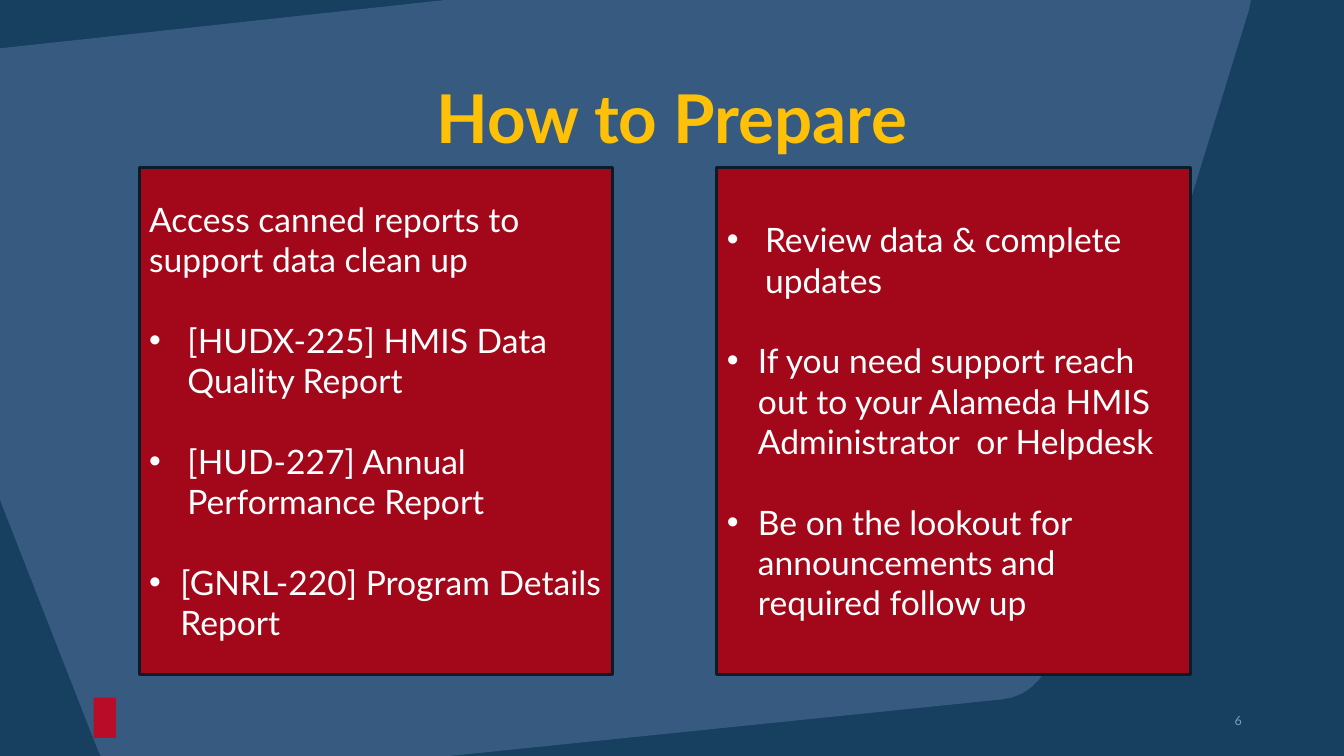
from dataclasses import dataclass

from lxml import etree
from pptx import Presentation, util as u
from pptx.dml.color import RGBColor
from pptx.enum import shapes, text
from pptx.oxml import ns

# Grid: one cell is a tenth of an inch, so the slide is 133.33 x 75 cells
CELL = u.Inches(0.1)
COLUMNS, ROWS = 133.33, 75

NAVY = RGBColor(0x17, 0x40, 0x60)
STEEL = RGBColor(0x37, 0x5B, 0x80)
CRIMSON = RGBColor(0xA3, 0x07, 0x1A)
SCARLET = RGBColor(0xB8, 0x0C, 0x29)
INK = RGBColor(0x0A, 0x1C, 0x2A)
AMBER = RGBColor(0xFF, 0xC1, 0x07)
MIST = RGBColor(0x7D, 0x9C, 0xB7)
WHITE = RGBColor(0xFF, 0xFF, 0xFF)

FONT = "Lato"
BODY_SIZE = 24
ITEM_GAP = 28.8  # one line of body text


@dataclass(frozen=True)
class Area:
    column: float
    row: float
    columns: float
    rows: float


@dataclass(frozen=True)
class Item:
    wording: str
    indent: float = 0  # in cells; zero means no bullet


@dataclass(frozen=True)
class Panel:
    area: Area
    items: tuple[Item, ...]


BACKDROP = [
    (44.2, 0), (124.1, 0), (123.9, 1), (104.1, 65.4), (103.7, 66.5),
    (103.1, 67.4), (102.3, 68.2), (101.4, 68.8), (100.4, 69.2),
    (99.3, 69.4), (44.6, 75), (10, 75), (9.7, 74.4), (0, 49.6), (0, 4.8),
]

PANELS = [
    Panel(Area(13.8, 16.6, 47, 50.3), (
        Item("Access canned reports to support data clean up"),
        Item("[HUDX-225] HMIS Data Quality Report", 3.8),
        Item("[HUD-227] Annual Performance Report", 3.8),
        Item("[GNRL-220] Program Details Report", 3.1),
    )),
    Panel(Area(71.1, 16.6, 47, 50.3), (
        Item("Review data & complete updates", 3.8),
        Item("If you need support reach out to your Alameda "
             "HMIS Administrator  or Helpdesk", 3.1),
        Item("Be on the lookout for announcements and required follow up", 3.1),
    )),
]


def cells(count: float) -> int:
    return round(count * CELL)


def bounds(area: Area) -> tuple[int, int, int, int]:
    return (cells(area.column), cells(area.row),
            cells(area.columns), cells(area.rows))


def place(shape, area: Area) -> None:
    shape.left, shape.top, shape.width, shape.height = bounds(area)


def style_runs(paragraph, size: float, colour: RGBColor, bold: bool = False) -> None:
    for run in paragraph.runs:
        run.font.name = FONT
        run.font.size = u.Pt(size)
        run.font.bold = bold
        run.font.color.rgb = colour


def set_bullet(paragraph, indent: float) -> None:
    properties = paragraph._p.get_or_add_pPr()
    properties.set("marL", str(cells(indent)))
    properties.set("indent", str(-cells(indent)))
    if not indent:
        etree.SubElement(properties, ns.qn("a:buNone"))
        return
    bullet_colour = etree.SubElement(properties, ns.qn("a:buClr"))
    etree.SubElement(bullet_colour, ns.qn("a:srgbClr"), val=str(WHITE))
    etree.SubElement(properties, ns.qn("a:buFont"), typeface="Arial")
    etree.SubElement(properties, ns.qn("a:buChar"), char="•")


def draw_backdrop(slide) -> None:
    corners = [(cells(x), cells(y)) for x, y in BACKDROP]
    builder = slide.shapes.build_freeform(*corners[0])
    builder.add_line_segments(corners[1:], close=True)
    backdrop = builder.convert_to_shape()
    backdrop.shadow.inherit = False
    backdrop.fill.solid()
    backdrop.fill.fore_color.rgb = STEEL
    backdrop.line.fill.background()
    slide.shapes._spTree.insert(2, backdrop._element)  # behind everything


def draw_brand_mark(slide, area: Area) -> None:
    mark = slide.shapes.add_shape(shapes.MSO_SHAPE.RECTANGLE, *bounds(area))
    mark.shadow.inherit = False
    mark.fill.solid()
    mark.fill.fore_color.rgb = SCARLET
    mark.line.fill.background()


def fill_title(title, wording: str, area: Area) -> None:
    place(title, area)
    frame = title.text_frame
    frame.text = wording
    frame.auto_size = text.MSO_AUTO_SIZE.NONE
    frame.vertical_anchor = text.MSO_ANCHOR.TOP
    heading = frame.paragraphs[0]
    heading.alignment = text.PP_ALIGN.CENTER
    heading.line_spacing = 0.9
    style_runs(heading, 48, AMBER, bold=True)


def fill_panel(body, panel: Panel) -> None:
    place(body, panel.area)
    body.fill.solid()
    body.fill.fore_color.rgb = CRIMSON
    body.line.color.rgb = INK
    body.line.width = u.Pt(2)
    frame = body.text_frame
    frame.text = "\n".join(item.wording for item in panel.items)
    frame.auto_size = text.MSO_AUTO_SIZE.NONE
    frame.vertical_anchor = text.MSO_ANCHOR.MIDDLE
    for number, (paragraph, item) in enumerate(zip(frame.paragraphs, panel.items)):
        paragraph.alignment = text.PP_ALIGN.LEFT
        paragraph.space_before = u.Pt(ITEM_GAP if number else 0)
        set_bullet(paragraph, item.indent)
        style_runs(paragraph, BODY_SIZE, WHITE)


def add_page_number(slide, wording: str, area: Area) -> None:
    frame = slide.shapes.add_textbox(*bounds(area)).text_frame
    frame.text = wording
    frame.word_wrap = True
    frame.vertical_anchor = text.MSO_ANCHOR.MIDDLE
    frame.paragraphs[0].alignment = text.PP_ALIGN.RIGHT
    style_runs(frame.paragraphs[0], 9, MIST)


def main() -> None:
    deck = Presentation()
    deck.slide_width, deck.slide_height = cells(COLUMNS), cells(ROWS)
    slide = deck.slides.add_slide(deck.slide_layouts.get_by_name("Two Content"))

    # Background
    slide.background.fill.solid()
    slide.background.fill.fore_color.rgb = NAVY
    draw_backdrop(slide)

    # Title and the two lists
    title, *bodies = slide.placeholders
    fill_title(title, "How to Prepare", Area(16.7, 8, 99.9, 10.7))
    for body, panel in zip(bodies, PANELS):
        fill_panel(body, panel)

    # Footer
    draw_brand_mark(slide, Area(9.3, 69.2, 2.2, 4))
    add_page_number(slide, "6", Area(94.2, 69.5, 30, 4))

    deck.save("out.pptx")


if __name__ == "__main__":
    main()
